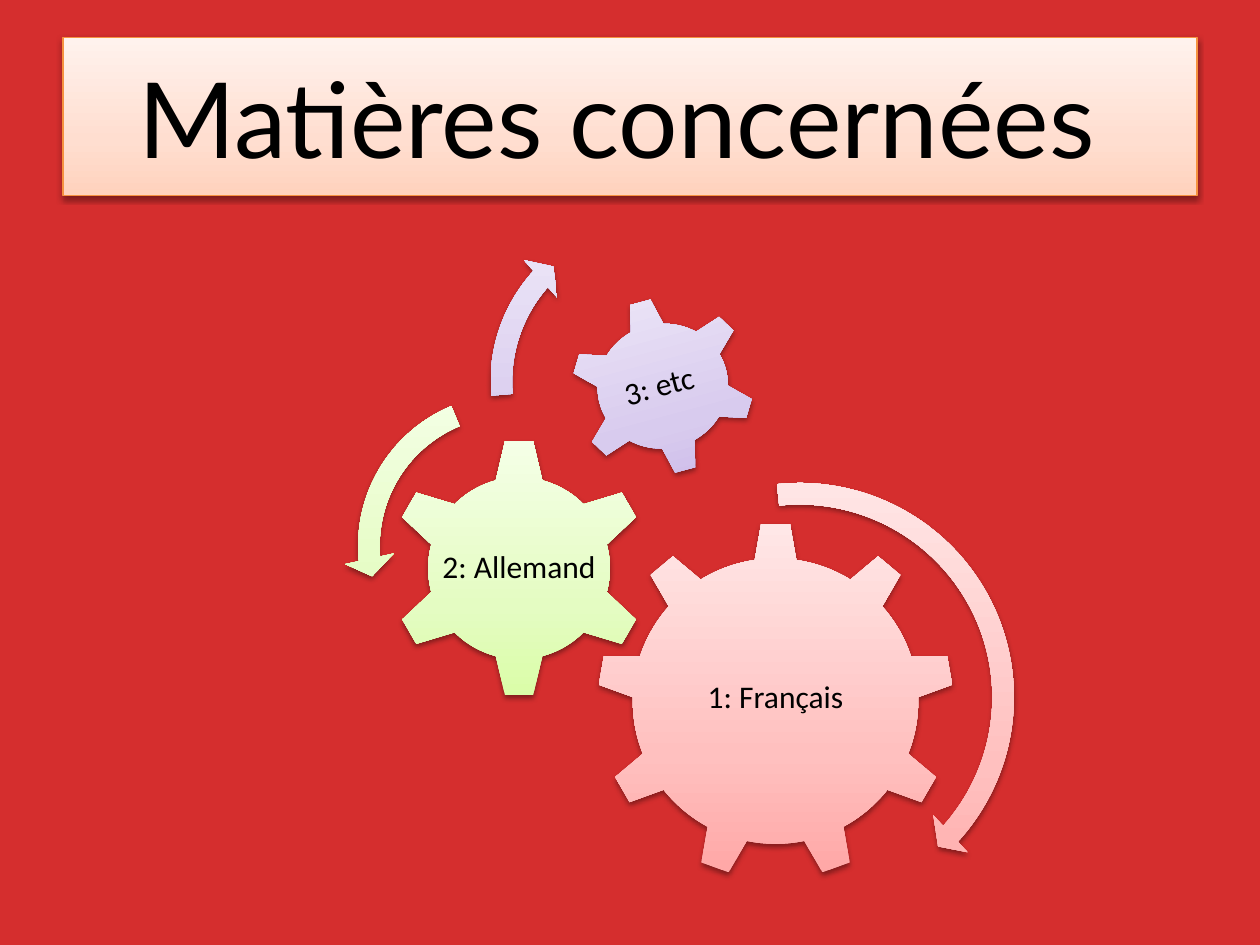
from copy import deepcopy

from lxml.etree import SubElement
from pptx import Presentation
from pptx.dml.color import RGBColor
from pptx.enum.shapes import MSO_SHAPE
from pptx.enum.text import MSO_ANCHOR, MSO_AUTO_SIZE, PP_ALIGN
from pptx.oxml.ns import qn
from pptx.util import Pt

RED = RGBColor(0xD5, 0x2E, 0x2E)
BLACK = RGBColor(0x00, 0x00, 0x00)
ORANGE = RGBColor(0xF6, 0x92, 0x40)

# Gradients run from the bottom of a shape to its top.
STOPS = (0, 0.35, 1)
PEACH = (RGBColor(0xFF, 0xD2, 0xBD), RGBColor(0xFF, 0xDE, 0xD0), RGBColor(0xFF, 0xF2, 0xED))
PINK = (RGBColor(0xFF, 0xA6, 0xA5), RGBColor(0xFF, 0xC0, 0xBF), RGBColor(0xFF, 0xE7, 0xE7))
GREEN = (RGBColor(0xDA, 0xFD, 0xA7), RGBColor(0xE4, 0xFC, 0xC2), RGBColor(0xF5, 0xFF, 0xE7))
PURPLE = (RGBColor(0xC9, 0xB5, 0xE8), RGBColor(0xD8, 0xCB, 0xEE), RGBColor(0xF0, 0xEA, 0xF9))

# Kind, box (left, top, width, height), rotation, colours, label
GEARS = (
    (MSO_SHAPE.GEAR_9, (341.3, 298.8, 203.8, 203.8), 0, PINK, "1: Français"),
    (MSO_SHAPE.GEAR_6, (222.5, 250.6, 148.3, 148.3), 0, GREEN, "2: Allemand"),
    (MSO_SHAPE.GEAR_6, (326.2, 169.9, 105.1, 101.5), 345, PURPLE, "3: etc "),
)

# Kind, box, colours, adjustments
ARROWS = (
    (MSO_SHAPE.CIRCULAR_ARROW, (326.2, 267.8, 261.4, 261.4), PINK,
     (0.047, 2.99, 25.272, 158.376, 0.055)),
    (MSO_SHAPE.LEFT_CIRCULAR_ARROW, (196.6, 217.4, 189.4, 189.4), GREEN,
     (0.065, 4.3, 104.891, 148.378, 0.075)),
    (MSO_SHAPE.CIRCULAR_ARROW, (272.2, 115.9, 204.5, 204.5), PURPLE,
     (0.06, 3.941, 133.138, 105.082, 0.07)),
)


def set_attributes(target, values):
    for name, value in values.items():
        setattr(target, name, value)


def fill_gradient(shape, colors):
    shape.fill.gradient()
    shape.fill.gradient_angle = 90
    stop_list = shape.element.spPr.find(".//" + qn("a:gsLst"))
    stop_list.insert(1, deepcopy(stop_list[0]))
    for stop, position, color in zip(shape.fill.gradient_stops, STOPS, colors):
        stop.position = position
        stop.color.rgb = color


def add_shadow(shape):
    shape.shadow.inherit = False
    effects = shape.element.spPr.find(qn("a:effectLst"))
    shadow = SubElement(effects, qn("a:outerShdw"), blurRad=str(Pt(3.1)),
                        dist=str(Pt(1.6)), dir="5400000", rotWithShape="0")
    color = SubElement(shadow, qn("a:srgbClr"), val=str(BLACK))
    SubElement(color, qn("a:alpha"), val="38000")


def write_text(shape, text, font_name, size, frame_format):
    frame = shape.text_frame
    set_attributes(frame, {"auto_size": MSO_AUTO_SIZE.NONE,
                           "vertical_anchor": MSO_ANCHOR.MIDDLE, **frame_format})
    paragraph = frame.paragraphs[0]
    paragraph.alignment = PP_ALIGN.CENTER
    run = paragraph.add_run()
    run.text = text
    set_attributes(run.font, {"name": font_name, "size": Pt(size)})
    run.font.color.rgb = BLACK


def format_title(title):
    set_attributes(title, {"left": Pt(36), "top": Pt(21.6),
                           "width": Pt(648), "height": Pt(90)})
    fill_gradient(title, PEACH)
    title.line.color.rgb = ORANGE
    title.line.width = Pt(0.75)
    add_shadow(title)
    write_text(title, "Matières concernées ", "Lato", 60, {"word_wrap": True})


def add_gradient_shape(group, kind, box, colors):
    shape = group.shapes.add_shape(kind, *map(Pt, box))
    fill_gradient(shape, colors)
    shape.line.fill.background()
    add_shadow(shape)
    return shape


def add_gear(group, kind, box, rotation, colors, label):
    gear = add_gradient_shape(group, kind, box, colors)
    gear.rotation = rotation
    margins = dict.fromkeys(
        ("margin_left", "margin_top", "margin_right", "margin_bottom"), Pt(2))
    write_text(gear, label, "Calibri", 18, {"word_wrap": False, **margins})
    gear.text_frame.paragraphs[0].line_spacing = 0.9


def add_arrow(group, kind, box, colors, adjustments):
    arrow = add_gradient_shape(group, kind, box, colors)
    for index, value in enumerate(adjustments):
        arrow.adjustments[index] = value


def main():
    presentation = Presentation()
    set_attributes(presentation, {"slide_width": Pt(720), "slide_height": Pt(540)})
    slide = presentation.slides.add_slide(presentation.slide_layouts[5])
    slide.background.fill.solid()
    slide.background.fill.fore_color.rgb = RED
    format_title(slide.shapes.title)
    group = slide.shapes.add_group_shape()
    for gear in GEARS:
        add_gear(group, *gear)
    for arrow in ARROWS:
        add_arrow(group, *arrow)
    presentation.save("out.pptx")


if __name__ == "__main__":
    main()
